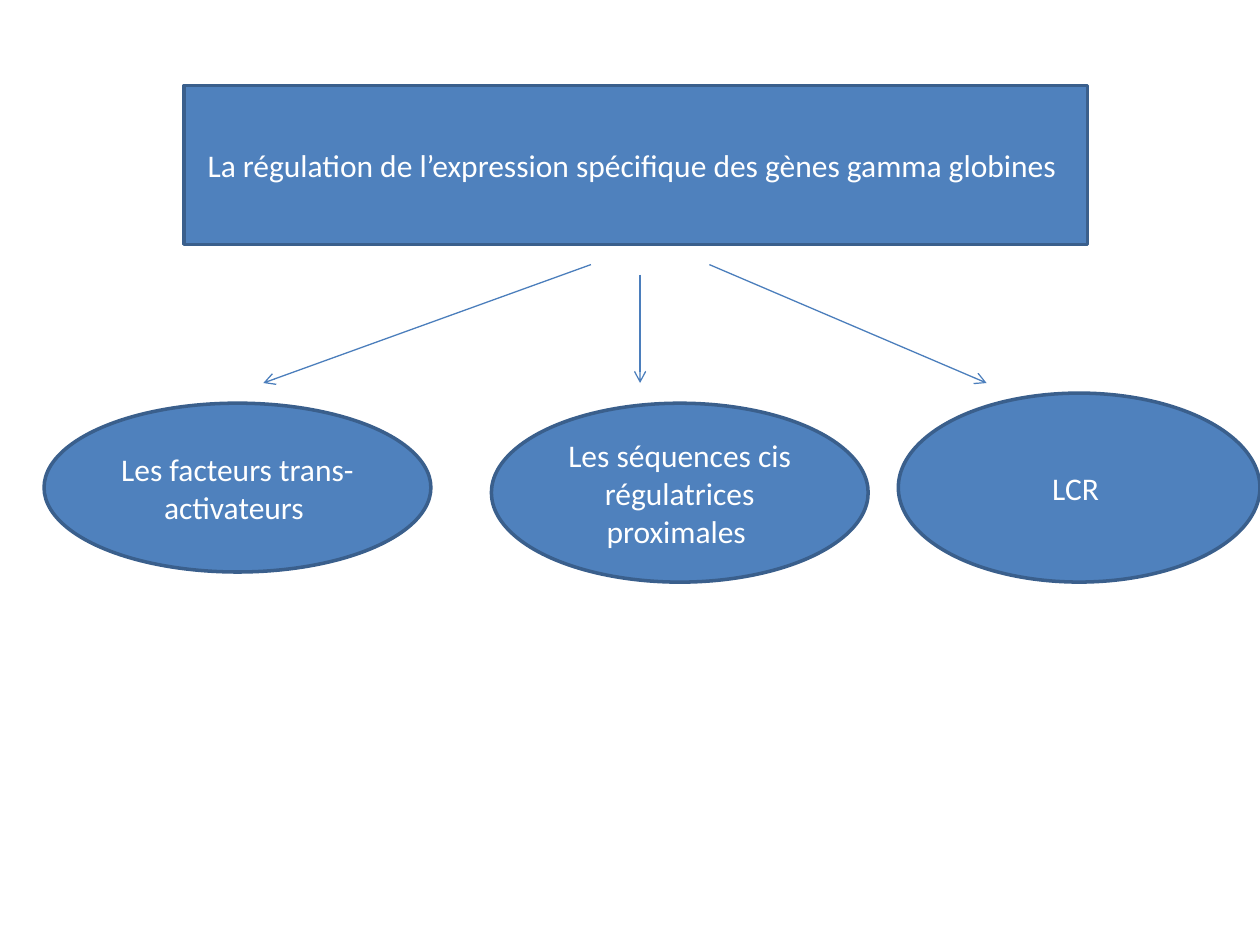
from dataclasses import dataclass

from lxml import etree
from pptx import Presentation
from pptx import util as u
from pptx.dml.color import RGBColor
from pptx.enum import shapes, text
from pptx.oxml.ns import qn
from pptx.slide import Slide

COLORS = {"fill": "4F81BD", "outline": "3A5F8C", "arrow": "4B7EBC", "text": "FFFFFF"}
FONT = "Calibri"
ARROW_END = 3.04


@dataclass
class Node:
    label: str
    left: float
    top: float
    width: float
    height: float
    kind: shapes.MSO_SHAPE = shapes.MSO_SHAPE.OVAL


@dataclass
class Arrow:
    start_x: float
    start_y: float
    end_x: float


NODES = [
    Node("La régulation de l’expression spécifique des gènes gamma globines ",
         1.46, 0.68, 7.17, 1.26, shapes.MSO_SHAPE.RECTANGLE),
    Node("Les facteurs trans-activateurs ", 0.35, 3.2, 3.07, 1.34),
    Node("Les séquences cis régulatrices proximales ", 3.9, 3.2, 2.99, 1.42),
    Node("LCR ", 7.13, 3.12, 2.87, 1.5),
]
ARROWS = [Arrow(4.69, 2.1, 2.09), Arrow(5.08, 2.18, 5.08), Arrow(5.63, 2.1, 7.83)]


def color(name: str) -> RGBColor:
    return RGBColor.from_string(COLORS[name])


def draw_node(slide: Slide, node: Node) -> None:
    shape = slide.shapes.add_shape(
        node.kind, u.Inches(node.left), u.Inches(node.top),
        u.Inches(node.width), u.Inches(node.height))
    shape.shadow.inherit = False
    shape.fill.solid()
    shape.fill.fore_color.rgb = color("fill")
    shape.line.color.rgb = color("outline")
    shape.line.width = u.Pt(2)
    frame = shape.text_frame
    frame.word_wrap = True
    frame.vertical_anchor = text.MSO_ANCHOR.MIDDLE
    paragraph = frame.paragraphs[0]
    paragraph.text = node.label
    paragraph.alignment = text.PP_ALIGN.CENTER
    paragraph.font.name = FONT
    paragraph.font.size = u.Pt(18)
    paragraph.font.color.rgb = color("text")


def draw_arrow(slide: Slide, arrow: Arrow) -> None:
    connector = slide.shapes.add_connector(
        shapes.MSO_CONNECTOR.STRAIGHT, u.Inches(arrow.start_x), u.Inches(arrow.start_y),
        u.Inches(arrow.end_x), u.Inches(ARROW_END))
    connector.line.color.rgb = color("arrow")
    connector.line.width = u.Pt(0.75)
    etree.SubElement(connector.line._get_or_add_ln(), qn("a:tailEnd"), type="arrow")
    etree.SubElement(connector._element.spPr, qn("a:effectLst"))


def main() -> None:
    presentation = Presentation()
    presentation.slide_width = u.Inches(10)
    presentation.slide_height = u.Inches(7.5)
    slide = presentation.slides.add_slide(presentation.slide_layouts[6])
    for node in NODES:
        draw_node(slide, node)
    for arrow in ARROWS:
        draw_arrow(slide, arrow)
    presentation.save("out.pptx")


if __name__ == "__main__":
    main()
